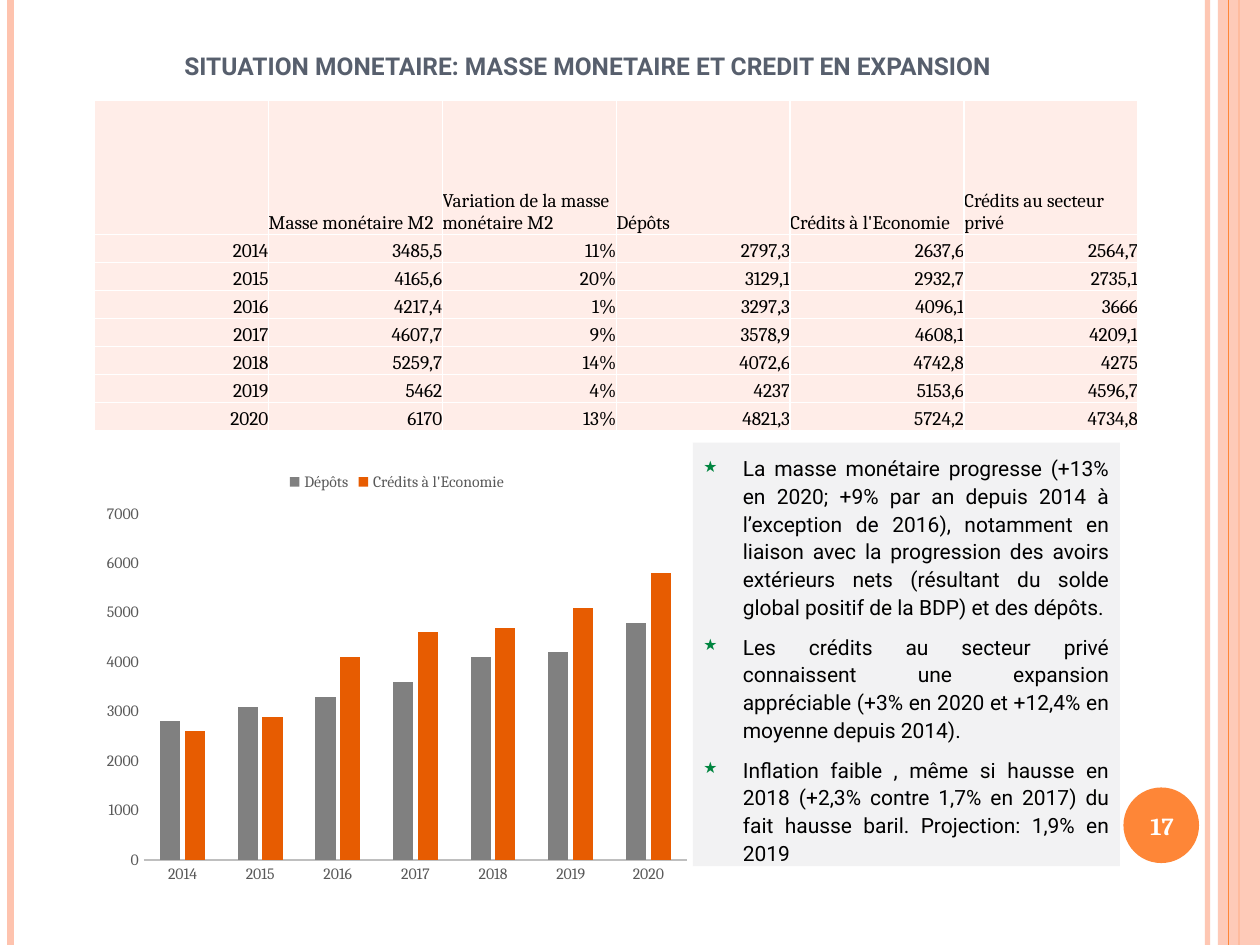
import dataclasses
import typing

import lxml.etree
import pptx
import pptx.chart.data
import pptx.dml.color
import pptx.enum.chart
import pptx.enum.shapes
import pptx.enum.text
import pptx.oxml.ns
import pptx.util

Pt = pptx.util.Pt
qn = pptx.oxml.ns.qn
Align = pptx.enum.text.PP_ALIGN
Anchor = pptx.enum.text.MSO_ANCHOR
Shape = pptx.enum.shapes.MSO_SHAPE


@dataclasses.dataclass(frozen=True)
class Theme:
    serif: str = "Cambria"
    sans: str = "Roboto"
    black: str = "000000"
    white: str = "FFFFFF"
    title: str = "575F6D"
    peach: str = "FEC3AE"
    orange: str = "FE8637"
    cell: str = "FFEDE8"
    panel: str = "E6E7E8"
    bullet: str = "00853F"
    axis_text: str = "595959"
    axis_line: str = "BFBFBF"
    deposits: str = "808080"
    credits: str = "E75C01"
    heading_size: float = 14
    body_size: float = 12
    table_size: float = 11
    chart_size: float = 10
    axis_size: float = 9


class Box(typing.NamedTuple):
    x: float
    y: float
    w: float
    h: float

    def lengths(self) -> list:
        return [Pt(v) for v in self]


class Rule(typing.NamedTuple):
    x: float
    color: str
    width: float
    alpha: int = 100


class Series(typing.NamedTuple):
    name: str
    values: tuple
    color: str


THEME = Theme()
WIDTH, HEIGHT = 720, 540
BACK_RULES = [
    Rule(690, THEME.peach, 3, 93),
    Rule(6, THEME.peach, 4.5),
    Rule(708, THEME.orange, 1.5),
]
BAND_RULE = Rule(702, THEME.orange, 0.75)
HEADERS = ("", "Masse monétaire M2", "Variation de la masse monétaire M2",
           "Dépôts", "Crédits à l'Economie", "Crédits au secteur privé")
ROWS = [
    ("2014", "3485,5", "11%", "2797,3", "2637,6", "2564,7"),
    ("2015", "4165,6", "20%", "3129,1", "2932,7", "2735,1"),
    ("2016", "4217,4", "1%", "3297,3", "4096,1", "3666"),
    ("2017", "4607,7", "9%", "3578,9", "4608,1", "4209,1"),
    ("2018", "5259,7", "14%", "4072,6", "4742,8", "4275"),
    ("2019", "5462", "4%", "4237", "5153,6", "4596,7"),
    ("2020", "6170", "13%", "4821,3", "5724,2", "4734,8"),
]
SERIES = [
    Series("Dépôts", (2800, 3100, 3300, 3600, 4100, 4200, 4800), THEME.deposits),
    Series("Crédits à l'Economie", (2600, 2900, 4100, 4600, 4700, 5100, 5800), THEME.credits),
]
BULLETS = [
    "La masse monétaire progresse (+13% en 2020; +9% par an depuis 2014 à l’exception de 2016), "
    "notamment en liaison avec la progression des avoirs extérieurs nets (résultant du solde "
    "global positif de la BDP) et des dépôts.",
    "Les crédits au secteur privé connaissent une expansion appréciable (+3% en 2020 et +12,4% "
    "en moyenne depuis 2014).",
    "Inflation faible , même si hausse en 2018 (+2,3% contre 1,7% en 2017) du fait hausse baril. "
    "Projection: 1,9% en 2019",
]


def rgb(color: str) -> pptx.dml.color.RGBColor:
    return pptx.dml.color.RGBColor.from_string(color)


def add_xml(parent, tag: str, **attrs: str):
    return lxml.etree.SubElement(parent, qn(tag), attrs)


def set_alpha(sp, percent: int) -> None:
    if percent < 100:
        for clr in sp._element.iter(qn("a:srgbClr")):
            add_xml(clr, "a:alpha", val=str(percent * 1000))


def style_font(font, name: str, size: float, color: str, bold: bool = False) -> None:
    font.name, font.size, font.bold = name, Pt(size), bold
    font.color.rgb = rgb(color)


def add_rule(s, rule: Rule) -> None:
    line = s.shapes.add_connector(pptx.enum.shapes.MSO_CONNECTOR.STRAIGHT,
                                  Pt(rule.x), Pt(0), Pt(rule.x), Pt(HEIGHT))
    line.line.color.rgb = rgb(rule.color)
    line.line.width = Pt(rule.width)
    set_alpha(line, rule.alpha)
    add_xml(line._element.spPr, "a:effectLst")


def add_block(s, kind, box: Box, color: str, alpha: int = 100):
    sp = s.shapes.add_shape(kind, *box.lengths())
    sp.shadow.inherit = False
    sp.fill.solid()
    sp.fill.fore_color.rgb = rgb(color)
    sp.line.fill.background()
    set_alpha(sp, alpha)
    return sp


def add_heading(s, box: Box, text: str, font: str, color: str, anchor) -> None:
    tf = s.shapes.add_textbox(*box.lengths()).text_frame
    tf.word_wrap = True
    tf.vertical_anchor = anchor
    p = tf.paragraphs[0]
    p.text, p.alignment = text, Align.CENTER
    style_font(p.font, font, THEME.heading_size, color, True)


def add_bullets(s, box: Box, items: list) -> None:
    tf = add_block(s, Shape.RECTANGLE, box, THEME.panel, 50).text_frame
    tf.word_wrap = True
    tf.vertical_anchor = Anchor.TOP
    tf.margin_left = tf.margin_right = tf.margin_top = tf.margin_bottom = Pt(6)
    for i, item in enumerate(items):
        p = tf.add_paragraph() if i else tf.paragraphs[0]
        p.text, p.alignment = item, Align.JUSTIFY
        p.line_spacing, p.space_after = 1.1, Pt(7)
        pPr = p._p.get_or_add_pPr()
        pPr.set("marL", str(Pt(22.5)))
        pPr.set("indent", str(-Pt(22.5)))
        add_xml(add_xml(pPr, "a:buClr"), "a:srgbClr", val=THEME.bullet)
        add_xml(pPr, "a:buSzPct", val="75000")
        add_xml(pPr, "a:buChar", char="★")
        style_font(p.font, THEME.sans, THEME.body_size, THEME.black)


def fill_cell(cell, text: str, align) -> None:
    cell.margin_left = cell.margin_right = cell.margin_top = cell.margin_bottom = 0
    cell.vertical_anchor = Anchor.BOTTOM
    for side in ("L", "R", "T", "B"):
        ln = add_xml(cell._tc.get_or_add_tcPr(), f"a:ln{side}", w=str(Pt(1)))
        add_xml(add_xml(ln, "a:solidFill"), "a:srgbClr", val=THEME.white)
    cell.fill.solid()
    cell.fill.fore_color.rgb = rgb(THEME.cell)
    p = cell.text_frame.paragraphs[0]
    p.text, p.alignment = text, align
    style_font(p.font, THEME.serif, THEME.table_size, THEME.black)


def add_money_table(s, box: Box) -> None:
    grid = [HEADERS, *ROWS]
    table = s.shapes.add_table(len(grid), len(HEADERS), *box.lengths()).table
    table.first_row = table.horz_banding = False
    for col in table.columns:
        col.width = Pt(box.w / len(HEADERS))
    for r, values in enumerate(grid):
        table.rows[r].height = Pt(16 if r else box.h - 16 * len(ROWS))
        for c, text in enumerate(values):
            fill_cell(table.cell(r, c), text, Align.RIGHT if r else Align.LEFT)


def add_money_chart(s, box: Box) -> None:
    data = pptx.chart.data.CategoryChartData()
    data.categories = [row[0] for row in ROWS]
    for series in SERIES:
        data.add_series(series.name, series.values)
    chart = s.shapes.add_chart(pptx.enum.chart.XL_CHART_TYPE.COLUMN_CLUSTERED,
                               *box.lengths(), data).chart
    style_font(chart.font, THEME.serif, THEME.chart_size, THEME.black)
    chart.has_title = False
    chart.has_legend = True
    chart.legend.position = pptx.enum.chart.XL_LEGEND_POSITION.TOP
    chart.legend.include_in_layout = False
    for part in (chart.legend, chart.category_axis.tick_labels, chart.value_axis.tick_labels):
        style_font(part.font, THEME.serif, THEME.axis_size, THEME.axis_text)
    for axis in (chart.category_axis, chart.value_axis):
        axis.has_major_gridlines = False
        axis.major_tick_mark = axis.minor_tick_mark = pptx.enum.chart.XL_TICK_MARK.NONE
    chart.category_axis.format.line.color.rgb = rgb(THEME.axis_line)
    chart.category_axis.format.line.width = Pt(1.5)
    value_axis = chart.value_axis
    value_axis.format.line.fill.background()
    value_axis.minimum_scale, value_axis.maximum_scale, value_axis.major_unit = 0, 7000, 1000
    plot = chart.plots[0]
    plot.gap_width, plot.overlap, plot.vary_by_categories = 164, -22, False
    for drawn, series in zip(plot.series, SERIES):
        drawn.format.fill.solid()
        drawn.format.fill.fore_color.rgb = rgb(series.color)


def main() -> None:
    prs = pptx.Presentation()
    prs.slide_width, prs.slide_height = Pt(WIDTH), Pt(HEIGHT)
    s = prs.slides.add_slide(prs.slide_layouts[6])
    for rule in BACK_RULES:
        add_rule(s, rule)
    add_block(s, Shape.RECTANGLE, Box(696, 0, 24, HEIGHT), THEME.peach, 87)
    add_rule(s, BAND_RULE)
    add_block(s, Shape.OVAL, Box(642, 450, 43.2, 43.2), THEME.orange)
    add_heading(s, Box(640, 451.5, 48, 41), "17", THEME.serif, THEME.white, Anchor.MIDDLE)
    add_heading(s, Box(45.4, 32.4, 581, 17.3),
                "SITUATION MONETAIRE: MASSE MONETAIRE ET CREDIT EN EXPANSION",
                THEME.sans, THEME.title, Anchor.BOTTOM)
    add_bullets(s, Box(396, 253, 244, 242), BULLETS)
    add_money_table(s, Box(54, 57, 596.4, 189))
    add_money_chart(s, Box(54, 262, 345.6, 247.7))
    prs.save("out.pptx")


if __name__ == "__main__":
    main()
